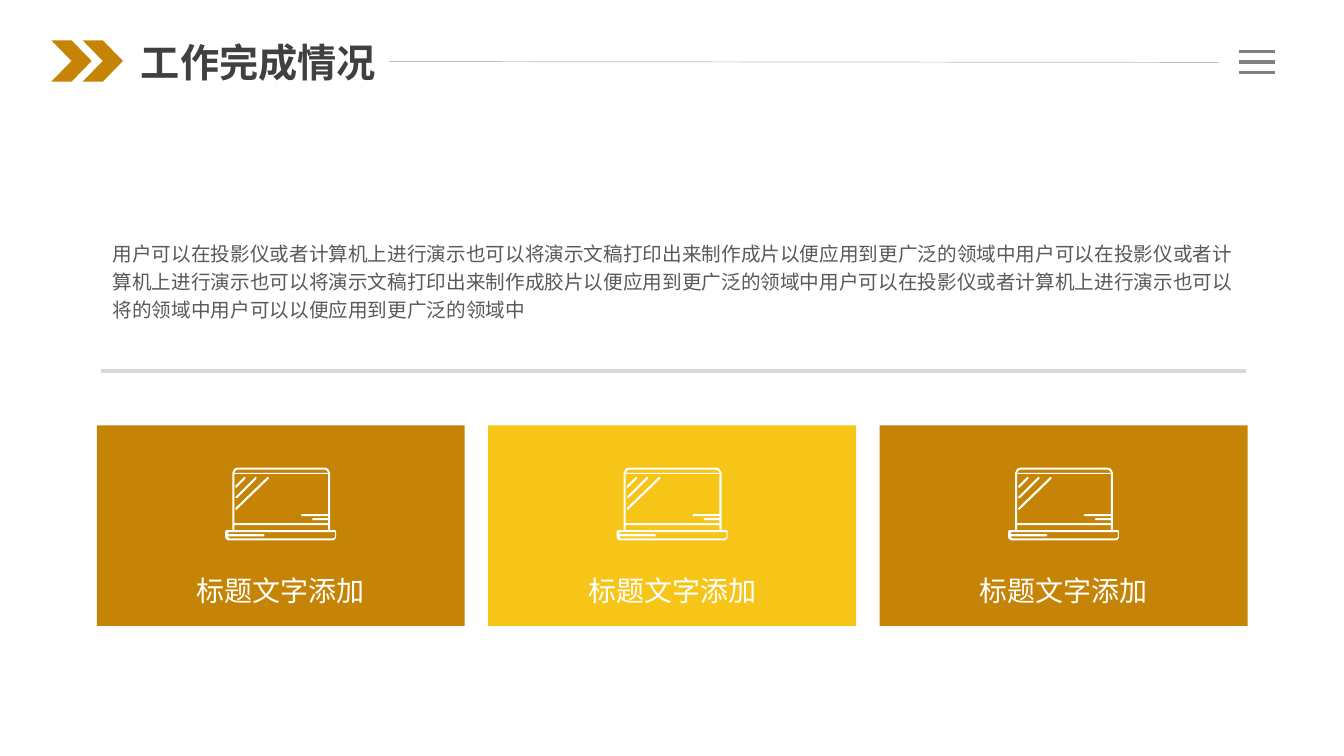
"""Builds the work completion slide with a summary text and three laptop cards."""
from dataclasses import dataclass
from typing import NamedTuple

from lxml.etree import SubElement
from pptx import Presentation
from pptx.dml.color import RGBColor
from pptx.enum.shapes import MSO_CONNECTOR, MSO_SHAPE
from pptx.enum.text import MSO_AUTO_SIZE, PP_ALIGN
from pptx.oxml.ns import qn
from pptx.shapes.autoshape import Shape
from pptx.slide import Slide
from pptx.util import Emu, Inches, Pt

CELL = Inches(1) / 12
COLUMNS, ROWS = 160, 90


@dataclass(frozen=True)
class Theme:
    font: str = "Noto Sans CJK SC"
    ochre: str = "C58405"
    yellow: str = "F6C518"
    white: str = "FFFFFF"
    title_ink: str = "404040"
    body_ink: str = "595959"
    divider: str = "D9D9D9"
    header_rule: str = "BFBFBF"
    menu: str = "808080"
    title_size: float = 28
    caption_size: float = 20
    body_size: float = 14


class Area(NamedTuple):
    column: float
    row: float
    columns: float
    rows: float


class Rule(NamedTuple):
    start: tuple[float, float]
    end: tuple[float, float]
    color: str
    weight: float


@dataclass(frozen=True)
class Label:
    text: str
    area: Area
    size: float
    color: str
    bold: bool = False
    wrap: bool = True
    align: PP_ALIGN = PP_ALIGN.LEFT
    spacing: float | None = 1.2


class Card(NamedTuple):
    caption: str
    color: str


Contour = list[tuple[float, float]]
THEME = Theme()

CARDS = [
    Card("标题文字添加", THEME.ochre),
    Card("标题文字添加", THEME.yellow),
    Card("标题文字添加", THEME.ochre),
]
FIRST_CARD = Area(11.52, 50.64, 43.8, 23.88)
CARD_PITCH = 46.6
CAPTION = Area(0, 66.84, 29.4, 5.64)
LAPTOP = Area(0, 55.68, 13.2, 8.64)
LAPTOP_UNITS = 110

FIRST_CHEVRON = Area(6.12, 4.8, 4.8, 4.92)
CHEVRON_PITCH = 3.72

RULES = [
    Rule((12, 44.16), (148.32, 44.16), THEME.divider, 3),
    Rule((46.32, 7.32), (145.08, 7.44), THEME.header_rule, 0.5),
] + [
    Rule((147.48, row), (151.8, row), THEME.menu, 2.25)
    for row in (6.12, 7.38, 8.64)
]

LABELS = [
    Label("工作完成情况", Area(15.6, 3.96, 30.72, 6.84), THEME.title_size,
          THEME.title_ink, bold=True, wrap=False, spacing=None),
    Label("用户可以在投影仪或者计算机上进行演示也可以将演示文稿打印出来制作成片以便应用到更广泛的领域中"
          "用户可以在投影仪或者计算机上进行演示也可以将演示文稿打印出来制作成胶片以便应用到更广泛的领域中"
          "用户可以在投影仪或者计算机上进行演示也可以将的领域中用户可以以便应用到更广泛的领域中",
          Area(12.24, 27.6, 136.2, 11.4), THEME.body_size, THEME.body_ink),
]


def glare(top: float, bottom: float) -> Contour:
    return [(top, 9), (top + 1, 9), (top + 1, 11), (12, bottom + 1),
            (11, bottom + 1.5), (10, bottom + 1), (10, bottom)]


LAPTOP_CONTOURS: list[Contour] = [
    [(3, 64), (3, 66), (38, 66), (39, 67), (38, 68), (3, 68), (3, 69),
     (4, 70), (107, 70), (109, 69), (109, 64)],
    [(9, 57), (9, 62), (102, 62), (102, 57)],
    glare(30, 29),
    glare(19, 18),
    glare(42, 40),
    [(9, 6), (9, 55), (102, 55), (102, 52), (87, 52), (86, 51), (87, 50),
     (102, 50), (102, 48), (76, 48), (75, 47), (76, 46), (102, 46), (102, 6)],
    [(12, 2), (10, 3), (9, 5), (102, 5), (101, 3), (99, 2)],
    [(12, 0), (99, 0), (102, 1), (104, 5), (104, 62), (109, 62), (110, 63),
     (110, 69), (109, 71), (107, 72), (3, 72), (1, 71), (0, 69), (0, 63),
     (1, 62), (7, 62), (7, 5), (9, 1)],
]


def cells(count: float) -> Emu:
    return Emu(round(count * CELL))


def centred(inner: Area, outer: Area) -> Area:
    return inner._replace(column=outer.column + (outer.columns - inner.columns) / 2)


def paint(shape: Shape, color: str) -> None:
    shape.fill.solid()
    shape.fill.fore_color.rgb = RGBColor.from_string(color)
    shape.line.fill.background()
    shape.shadow.inherit = False


def draw_block(slide: Slide, kind: MSO_SHAPE, area: Area, color: str) -> None:
    paint(slide.shapes.add_shape(kind, *map(cells, area)), color)


def draw_rule(slide: Slide, rule: Rule) -> None:
    connector = slide.shapes.add_connector(
        MSO_CONNECTOR.STRAIGHT, *map(cells, rule.start + rule.end))
    connector.line.color.rgb = RGBColor.from_string(rule.color)
    connector.line.width = Pt(rule.weight)
    SubElement(connector._element.spPr, qn("a:effectLst"))


def draw_label(slide: Slide, label: Label) -> None:
    frame = slide.shapes.add_textbox(*map(cells, label.area)).text_frame
    frame.word_wrap = label.wrap
    frame.auto_size = MSO_AUTO_SIZE.SHAPE_TO_FIT_TEXT
    paragraph = frame.paragraphs[0]
    paragraph.alignment = label.align
    paragraph.line_spacing = label.spacing
    run = paragraph.add_run()
    run.text = label.text
    run.font.size = Pt(label.size)
    run.font.bold = label.bold
    run.font.color.rgb = RGBColor.from_string(label.color)
    run.font.name = THEME.font
    SubElement(run.font._element, qn("a:ea"), typeface=THEME.font)


def draw_laptop(slide: Slide, area: Area) -> None:
    first, *others = LAPTOP_CONTOURS
    builder = slide.shapes.build_freeform(
        *first[0], scale=cells(area.columns) / LAPTOP_UNITS)
    builder.add_line_segments(first[1:], close=True)
    for contour in others:
        builder.move_to(*contour[0])
        builder.add_line_segments(contour[1:], close=True)
    paint(builder.convert_to_shape(cells(area.column), cells(area.row)), THEME.white)


def draw_card(slide: Slide, card: Card, index: int) -> None:
    area = FIRST_CARD._replace(column=FIRST_CARD.column + index * CARD_PITCH)
    draw_block(slide, MSO_SHAPE.RECTANGLE, area, card.color)
    draw_laptop(slide, centred(LAPTOP, area))
    draw_label(slide, Label(card.caption, centred(CAPTION, area), THEME.caption_size,
                            THEME.white, align=PP_ALIGN.CENTER))


def main() -> None:
    deck = Presentation()
    deck.slide_width, deck.slide_height = cells(COLUMNS), cells(ROWS)
    slide = deck.slides.add_slide(deck.slide_layouts[6])
    for index, card in enumerate(CARDS):
        draw_card(slide, card, index)
    for index in range(2):
        column = FIRST_CHEVRON.column + index * CHEVRON_PITCH
        draw_block(slide, MSO_SHAPE.CHEVRON, FIRST_CHEVRON._replace(column=column), THEME.ochre)
    for rule in RULES:
        draw_rule(slide, rule)
    for label in LABELS:
        draw_label(slide, label)
    deck.save("out.pptx")


if __name__ == "__main__":
    main()
